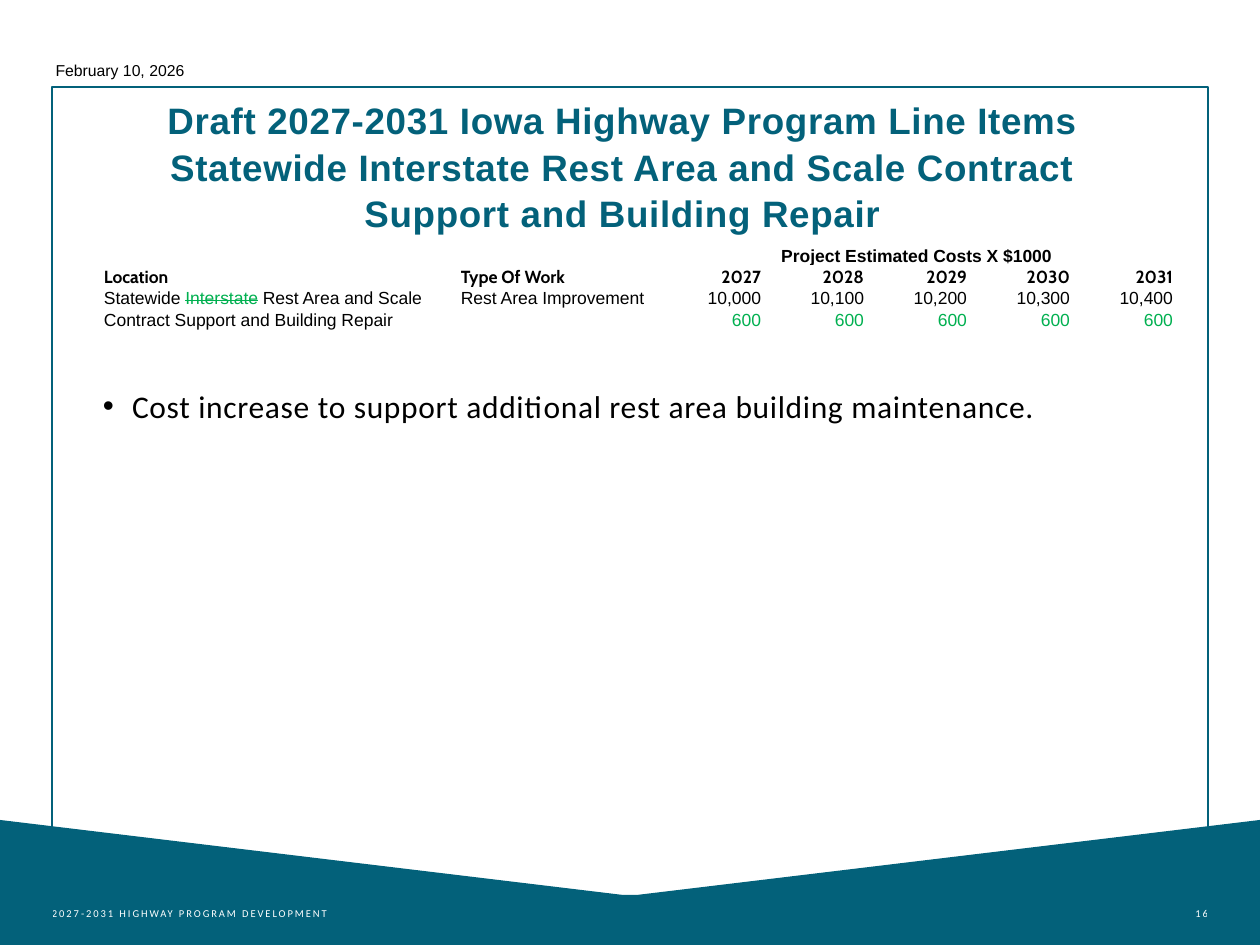
from lxml import etree
from pptx import Presentation
from pptx.dml.color import RGBColor
from pptx.enum.shapes import MSO_SHAPE
from pptx.enum.text import MSO_ANCHOR, PP_ALIGN
from pptx.oxml.ns import qn
from pptx.util import Emu, Pt

SCALE = 914400 / 126
LEFT, CENTER, RIGHT = PP_ALIGN.LEFT, PP_ALIGN.CENTER, PP_ALIGN.RIGHT
TOP, BOTTOM = MSO_ANCHOR.TOP, MSO_ANCHOR.BOTTOM
RECTANGLE = MSO_SHAPE.RECTANGLE
COLORS = {"teal": "03617A", "white": "FFFFFF", "black": "000000", "green": "00B050"}

COST_HEADING = "Project Estimated Costs X $1000"
HEADINGS = ["Location", "Type Of Work", "2027", "2028", "2029", "2030", "2031"]
LOCATION = [("Statewide ", {}), ("Interstate", {"color_name": "green", "strike": True}),
            (" Rest Area and Scale", {})]
COSTS = ["10,000", "10,100", "10,200", "10,300", "10,400"]
SUPPORT_COSTS = ["600"] * 5


def px(length):
    """Turn a length in px into EMU."""
    return Emu(round(length * SCALE))


def color(name):
    """Look up a colour by name."""
    return RGBColor.from_string(COLORS[name])


def add_run(paragraph, text, size=10, font="Arial", color_name="black", bold=False,
            spacing=0, strike=False):
    """Add one formatted run to a paragraph."""
    run = paragraph.add_run()
    run.text = text
    run.font.size, run.font.name, run.font.bold = Pt(size), font, bold
    run.font.color.rgb = color(color_name)
    properties = run._r.get_or_add_rPr()
    if spacing:
        properties.set("spc", str(round(spacing * 100)))
    if strike:
        properties.set("strike", "sngStrike")


def write(frame, lines, align=LEFT, line_spacing=None, bullet=0, **style):
    """Write lines, each a string or a list of (text, overrides), into a text frame."""
    for index, line in enumerate(lines):
        paragraph = frame.add_paragraph() if index else frame.paragraphs[0]
        if bullet:
            properties = paragraph._p.get_or_add_pPr()
            properties.set("marL", str(px(bullet)))
            properties.set("indent", str(-px(bullet)))
            etree.SubElement(properties, qn("a:buFont")).set("typeface", "Arial")
            etree.SubElement(properties, qn("a:buChar")).set("char", "•")
        paragraph.alignment = align
        if line_spacing:
            paragraph.line_spacing = line_spacing
        for text, overrides in [(line, {})] if isinstance(line, str) else line:
            format_options = {**style, **overrides}
            add_run(paragraph, text, **format_options)


def add_text(slide, box, lines, margins=(0, 6, 0, 6), anchor=TOP, wrap=True, **style):
    """Add a text box at (left, top, width, height)."""
    frame = slide.shapes.add_textbox(*map(px, box)).text_frame
    frame.word_wrap, frame.vertical_anchor = wrap, anchor
    (frame.margin_left, frame.margin_top,
     frame.margin_right, frame.margin_bottom) = map(px, margins)
    write(frame, lines, **style)


def add_frame(slide, box):
    """Draw the outline around the content."""
    outline = slide.shapes.add_shape(RECTANGLE, *map(px, box))
    outline.shadow.inherit = False
    outline.fill.background()
    outline.line.color.rgb = color("teal")
    outline.line.width = Pt(1)


def add_footer(slide, box):
    """Draw the notched footer band with its label and page number."""
    left, top, width, height = box
    middle, notch, half_notch, inset = left + width / 2, top + 75, 7, 52
    right, bottom = left + width, top + height
    builder = slide.shapes.build_freeform(left, top, scale=SCALE)
    builder.add_line_segments([(middle - half_notch, notch), (middle + half_notch, notch),
                               (right, top), (right, bottom), (left, bottom)])
    band = builder.convert_to_shape()
    band.shadow.inherit = False
    band.fill.solid()
    band.fill.fore_color.rgb = color("teal")
    band.line.fill.background()
    style = {"anchor": BOTTOM, "size": 6, "font": "Calibri", "color_name": "white",
             "spacing": 1.1}
    label_top, label_height, page_width = bottom - 69, 50, 122
    add_text(slide, (left + inset, label_top, 336, label_height),
             ["2027-2031 HIGHWAY PROGRAM DEVELOPMENT"], **style)
    add_text(slide, (right - inset - page_width, label_top, page_width, label_height),
             ["16"], align=RIGHT, **style)


def add_costs(slide, box):
    """Add the line item table with yearly costs."""
    left, top, width, height = box
    location_width, work_width = 357, 199
    year_width = (width - location_width - work_width) / 5
    widths = [location_width, work_width] + [year_width] * 5
    heights = [height - 3 * 22] + [22] * 3
    rows = [
        (["", "", COST_HEADING, "", "", "", ""], {"bold": True}),
        (HEADINGS, {"bold": True, "font": "Cabin"}),
        ([LOCATION, "Rest Area Improvement", *COSTS], {}),
        (["Contract Support and Building Repair", "", *SUPPORT_COSTS], {}),
    ]
    table = slide.shapes.add_table(len(rows), len(widths), *map(px, box)).table
    table.first_row = table.horz_banding = False
    for column, column_width in zip(table.columns, widths):
        column.width = px(column_width)
    for row, row_height in zip(table.rows, heights):
        row.height = px(row_height)
    for row_index, (contents, style) in enumerate(rows):
        for column_index, content in enumerate(contents):
            cell = table.cell(row_index, column_index)
            cell.margin_left = cell.margin_right = cell.margin_top = px(1)
            cell.margin_bottom = 0
            if row_index == 1:
                cell.fill.solid()
                cell.fill.fore_color.rgb = color("white")
            else:
                cell.fill.background()
            if content:
                is_year = column_index > 1
                shade = "green" if is_year and row_index == 3 else "black"
                write(cell.text_frame, [content], align=RIGHT if is_year else LEFT,
                      color_name=shade, **style)
            else:
                ending = cell.text_frame.paragraphs[0]._p.get_or_add_endParaRPr()
                ending.set("sz", "1000")
    heading = table.cell(0, 2)
    heading.merge(table.cell(0, 6))
    heading.vertical_anchor = BOTTOM
    heading.text_frame.paragraphs[0].alignment = CENTER


def main():
    """Build the slide and save it."""
    deck = Presentation()
    deck.slide_width, deck.slide_height = px(1260), px(945)
    slide = deck.slides.add_slide(deck.slide_layouts[6])
    add_footer(slide, (0, 820, 1260, 125))
    add_frame(slide, (52, 87, 1156, 839))
    add_text(slide, (40, 55, 160, 31), ["February 10, 2026"], margins=(13, 6, 13, 6),
             wrap=False, align=CENTER, size=9)
    add_text(slide, (103, 89, 1052, 105),
             ["Draft 2027-2031 Iowa Highway Program Line Items",
              "Statewide Interstate Rest Area and Scale Contract Support and Building Repair"],
             margins=(0, 6, 13, 6), align=CENTER, line_spacing=1.06, size=21,
             color_name="teal", bold=True, spacing=0.4)
    add_text(slide, (103, 381, 1052, 388),
             ["Cost increase to support additional rest area building maintenance."],
             margins=(0, 6, 13, 6), bullet=29, size=18, font="Calibri", spacing=0.4)
    add_costs(slide, (103, 242, 1071, 90))
    deck.save("out.pptx")


if __name__ == "__main__":
    main()
